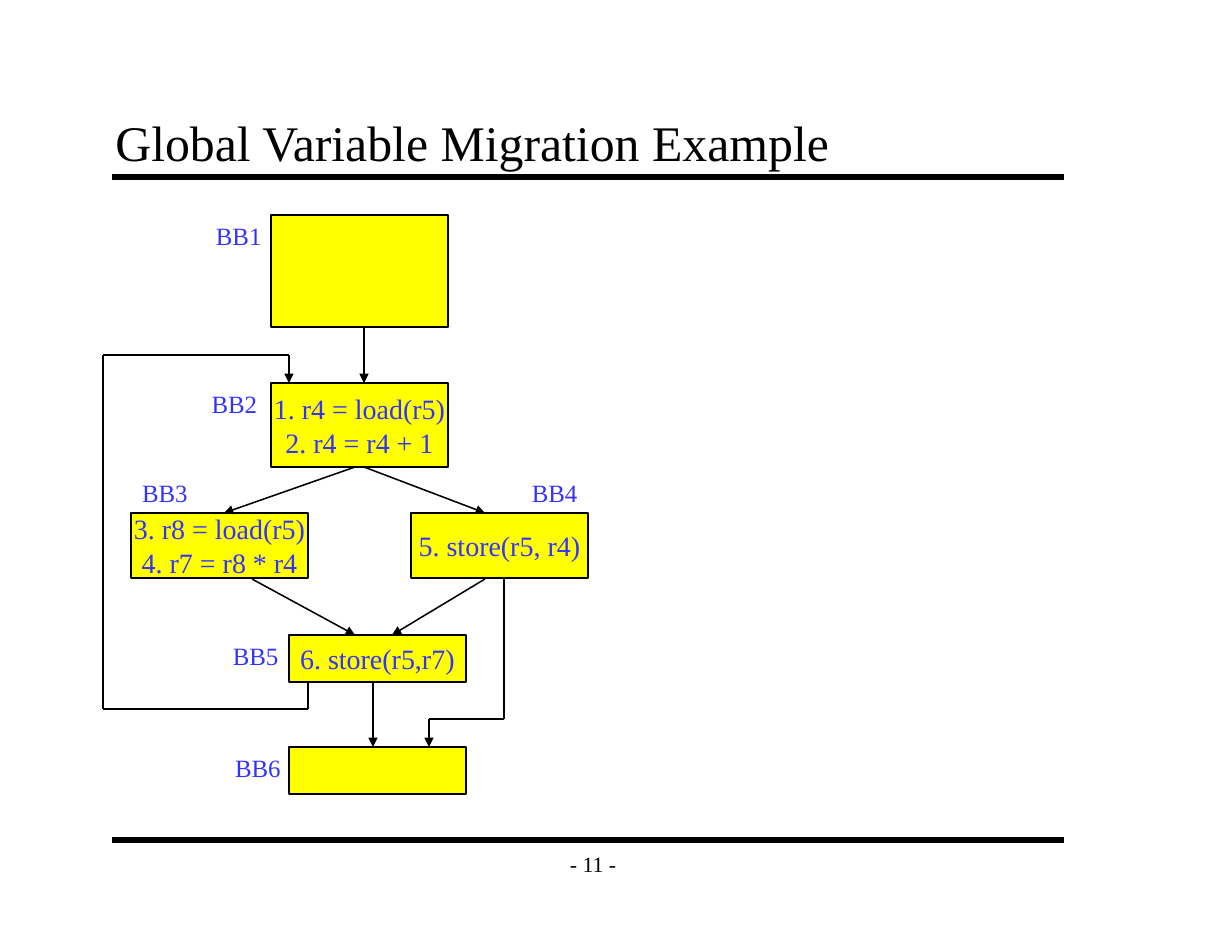
"""Build the slide showing a control-flow graph for global variable migration."""
from dataclasses import dataclass
from itertools import pairwise

from lxml.etree import SubElement
from pptx import Presentation
from pptx.dml.color import RGBColor
from pptx.enum.shapes import MSO_CONNECTOR as Conn, MSO_SHAPE as Shape
from pptx.enum.text import MSO_ANCHOR as Anchor, MSO_AUTO_SIZE as AutoSize, PP_ALIGN as Align
from pptx.oxml.ns import qn
from pptx.util import Inches, Pt

COLORS = {"ink": "000000", "block": "FFFF00", "code": "3333FF"}
FONT = "Times New Roman"
BLOCK_W = 1.58
Point = tuple[float, float]


@dataclass
class Block:
    label: str
    label_at: Point
    at: Point
    height: float
    code: str = ""


@dataclass
class Edge:
    points: list[Point]


BLOCKS = [
    Block("BB1", (1.83, 1.92), (2.42, 1.92), 1),
    Block("BB2", (1.79, 3.42), (2.42, 3.42), 0.75, "1. r4 = load(r5)\n2. r4 = r4 + 1"),
    Block("BB3", (1.17, 4.22), (1.17, 4.58), 0.58, "3. r8 = load(r5)\n4. r7 = r8 * r4"),
    Block("BB4", (4.65, 4.22), (3.67, 4.58), 0.58, "5. store(r5, r4)"),
    Block("BB5", (1.98, 5.67), (2.58, 5.67), 0.42, "6. store(r5,r7)"),
    Block("BB6", (2, 6.67), (2.58, 6.67), 0.42),
]

EDGES = [
    Edge([(3.25, 2.92), (3.25, 3.42)]),
    Edge([(3.17, 4.17), (2, 4.58)]),
    Edge([(3.25, 4.17), (4.33, 4.58)]),
    Edge([(2.25, 5.17), (3.17, 5.67)]),
    Edge([(4.33, 5.17), (3.5, 5.67)]),
    Edge([(3.33, 6.08), (3.33, 6.67)]),
    Edge([(2.75, 6.08), (2.75, 6.33), (0.92, 6.33), (0.92, 3.17), (2.58, 3.17), (2.58, 3.42)]),
    Edge([(4.5, 5.17), (4.5, 6.42), (3.83, 6.42), (3.83, 6.67)]),
]


def rgb(name: str) -> RGBColor:
    return RGBColor.from_string(COLORS[name])


def write(sp, text: str, *, size: float, color: str = "ink", align=Align.LEFT,
          anchor=Anchor.TOP, wrap: bool = False, auto_size=AutoSize.NONE,
          inset: Point = (0.1, 0.05)) -> None:
    tf = sp.text_frame
    tf.text = text
    tf.word_wrap = wrap
    tf.auto_size = auto_size
    tf.vertical_anchor = anchor
    tf.margin_left = tf.margin_right = Inches(inset[0])
    tf.margin_top = tf.margin_bottom = Inches(inset[1])
    for p in tf.paragraphs:
        p.alignment = align
        for r in p.runs:
            r.font.name = FONT
            r.font.size = Pt(size)
            r.font.color.rgb = rgb(color)


def add_text(s, at: Point, size_in: Point, text: str, **fmt) -> None:
    write(s.shapes.add_textbox(*map(Inches, at + size_in)), text, **fmt)


def add_line(s, start: Point, end: Point, width: float = 1, arrow: bool = False) -> None:
    line = s.shapes.add_connector(Conn.STRAIGHT, *map(Inches, start + end))
    line.line.color.rgb = rgb("ink")
    line.line.width = Pt(width)
    if arrow:
        SubElement(line.line._get_or_add_ln(), qn("a:tailEnd"), type="triangle")
    SubElement(line._element.spPr, qn("a:effectLst"))


def add_block(s, block: Block) -> None:
    sp = s.shapes.add_shape(
        Shape.RECTANGLE, *map(Inches, block.at + (BLOCK_W, block.height)))
    sp.shadow.inherit = False
    sp.fill.solid()
    sp.fill.fore_color.rgb = rgb("block")
    sp.line.color.rgb = rgb("ink")
    sp.line.width = Pt(1)
    if block.code:
        write(sp, block.code, size=18, color="code", align=Align.CENTER, anchor=Anchor.MIDDLE)


def add_edge(s, edge: Edge) -> None:
    for start, end in pairwise(edge.points):
        add_line(s, start, end, arrow=end == edge.points[-1])


def main() -> None:
    prs = Presentation()
    prs.slide_width, prs.slide_height = Inches(11), Inches(8.5)
    s = prs.slides.add_slide(prs.slide_layouts[5])

    for y in (1.58, 7.5):
        add_line(s, (1, y), (9.5, y), width=4)
    add_text(s, (4.92, 7.5), (0.75, 0.42), "- 11 -", size=14, align=Align.CENTER,
             anchor=Anchor.MIDDLE, inset=(0.11, 0.06))

    title = s.shapes.title
    title.left, title.top, title.width, title.height = map(Inches, (0.92, 0.92, 8.5, 0.67))
    write(title, "Global Variable Migration Example", size=32, anchor=Anchor.BOTTOM,
          wrap=True, inset=(0.11, 0.06))

    for block in BLOCKS:
        add_block(s, block)
    for edge in EDGES:
        add_edge(s, edge)
    for block in BLOCKS:
        add_text(s, block.label_at, (0.61, 0.37), block.label, size=16, color="code",
                 auto_size=AutoSize.SHAPE_TO_FIT_TEXT)
    prs.save("out.pptx")


if __name__ == "__main__":
    main()
